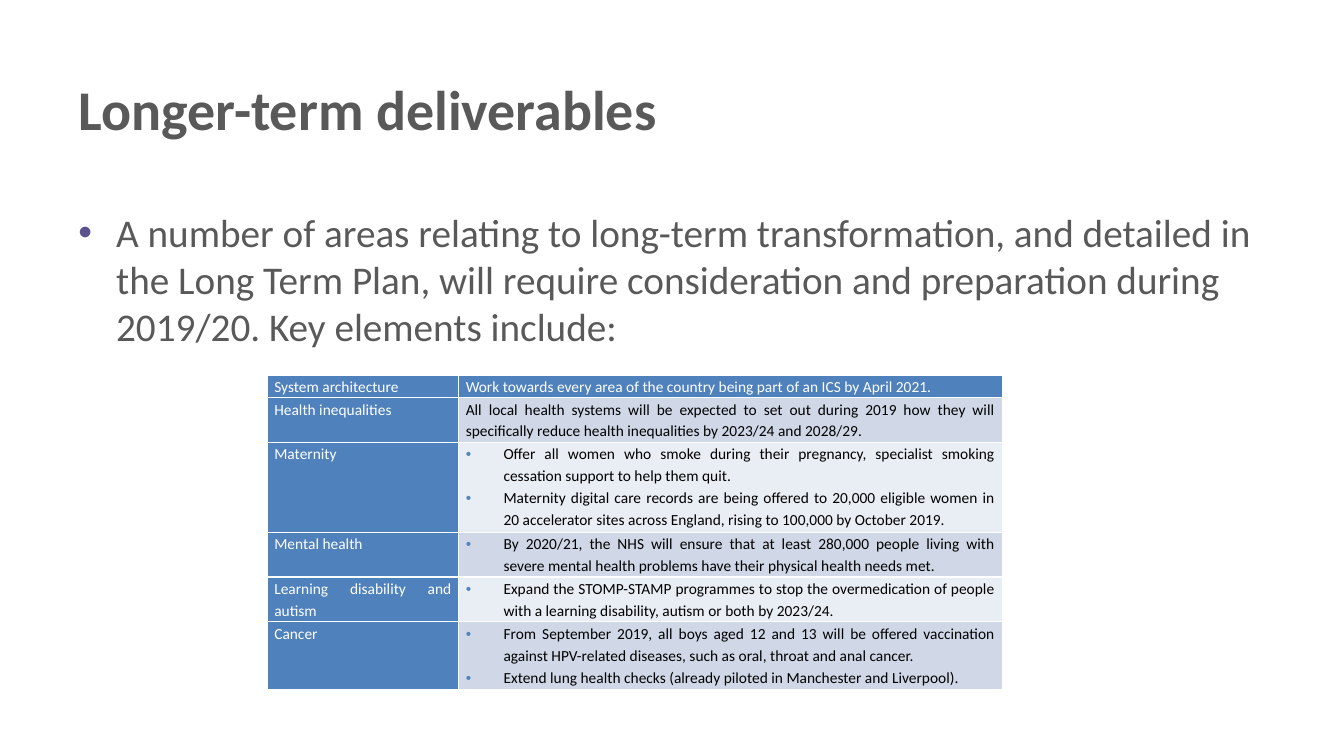
from dataclasses import dataclass

from lxml.etree import SubElement
from pptx import Presentation
from pptx.dml.color import RGBColor as RGB
from pptx.enum.text import MSO_ANCHOR as Anchor, PP_ALIGN as Align
from pptx.oxml.ns import qn
from pptx.util import Emu, Inches, Pt


@dataclass(frozen=True)
class Theme:
    font: str = "Calibri"
    text: str = "595959"
    accent: str = "4F81BD"
    bands: tuple[str, str] = ("D0D8E8", "E9EDF4")
    white: str = "FFFFFF"
    black: str = "000000"
    body_bullet: str = "5B518E"
    cell_bullet: str = "5185C0"
    title_size: int = 40
    body_size: int = 28
    cell_size: int = 11
    border: float = 1


@dataclass(frozen=True)
class Area:
    col: float
    row: float
    cols: float
    rows: float


@dataclass(frozen=True)
class Deliverable:
    topic: str
    points: tuple[str, ...]
    lines: int
    bulleted: bool = True


THEME = Theme()
WIDTH, HEIGHT = Inches(13.33), Inches(7.5)
TITLE = Area(5.1, 3.87, 80.95, 20.8)
BODY = Area(5.1, 26.93, 90.4, 59.87)
TABLE_COL, TABLE_ROW = 19.88, 49.6
TABLE_COLS = (14.25, 40.44)
LINE_ROWS = 2.97
CELL_MARGIN = 0.53
INDENT = 2.81

DELIVERABLES = [
    Deliverable("System architecture", (
        "Work towards every area of the country being part of an ICS by April 2021.",
    ), 1, False),
    Deliverable("Health inequalities", (
        "All local health systems will be expected to set out during 2019 how they will "
        "specifically reduce health inequalities by 2023/24 and 2028/29.",
    ), 2, False),
    Deliverable("Maternity", (
        "Offer all women who smoke during their pregnancy, specialist smoking cessation "
        "support to help them quit.",
        "Maternity digital care records are being offered to 20,000 eligible women in 20 "
        "accelerator sites across England, rising to 100,000 by October 2019.",
    ), 4),
    Deliverable("Mental health", (
        "By 2020/21, the NHS will ensure that at least 280,000 people living with severe "
        "mental health problems have their physical health needs met.",
    ), 2),
    Deliverable("Learning disability and autism", (
        "Expand the STOMP-STAMP programmes to stop the overmedication of people with a "
        "learning disability, autism or both by 2023/24.",
    ), 2),
    Deliverable("Cancer", (
        "From September 2019, all boys aged 12 and 13 will be offered vaccination against "
        "HPV-related diseases, such as oral, throat and anal cancer.",
        "Extend lung health checks (already piloted in Manchester and Liverpool).",
    ), 3),
]


def across(cols: float) -> Emu:
    return Emu(round(WIDTH * cols / 100))


def down(rows: float) -> Emu:
    return Emu(round(HEIGHT * rows / 100))


def add_bullet(p, color: str) -> None:
    pPr = p._p.get_or_add_pPr()
    pPr.set("marL", str(across(INDENT)))
    pPr.set("indent", str(-across(INDENT)))
    SubElement(SubElement(pPr, qn("a:buClr")), qn("a:srgbClr"), val=color)
    SubElement(pPr, qn("a:buFont"), typeface="Arial")
    SubElement(pPr, qn("a:buChar"), char="•")


def format_runs(p, size: int, color: str, bold: bool = False) -> None:
    for r in p.runs:
        r.font.name = THEME.font
        r.font.size = Pt(size)
        r.font.bold = bold
        r.font.color.rgb = RGB.from_string(color)


def add_text(s, area: Area, text: str, size: int, anchor: Anchor,
             bold: bool = False, bullet: str = "") -> None:
    sp = s.shapes.add_textbox(across(area.col), down(area.row),
                              across(area.cols), down(area.rows))
    tf = sp.text_frame
    tf.word_wrap = True
    tf.vertical_anchor = anchor
    tf.text = text
    p = tf.paragraphs[0]
    if bullet:
        add_bullet(p, bullet)
    format_runs(p, size, THEME.text, bold)


def style_cell(cell, fill: str) -> None:
    cell.margin_left = cell.margin_right = across(CELL_MARGIN)
    cell.margin_top = cell.margin_bottom = 0
    tcPr = cell._tc.get_or_add_tcPr()
    for side in "LRTB":
        ln = SubElement(tcPr, qn(f"a:ln{side}"), w=str(Pt(THEME.border)))
        SubElement(SubElement(ln, qn("a:solidFill")), qn("a:srgbClr"), val=THEME.white)
    cell.fill.solid()
    cell.fill.fore_color.rgb = RGB.from_string(fill)


def fill_cell(cell, texts: tuple[str, ...], fill: str, color: str, bulleted: bool) -> None:
    style_cell(cell, fill)
    tf = cell.text_frame
    tf.text = "\n".join(texts)
    for p in tf.paragraphs:
        if bulleted:
            add_bullet(p, THEME.cell_bullet)
        p.alignment = Align.JUSTIFY
        p.line_spacing = 1.15
        format_runs(p, THEME.cell_size, color)


def add_deliverables(s, items: list[Deliverable]) -> None:
    height = LINE_ROWS * sum(item.lines for item in items)
    frame = s.shapes.add_table(len(items), len(TABLE_COLS), across(TABLE_COL),
                               down(TABLE_ROW), across(sum(TABLE_COLS)), down(height))
    table = frame.table
    table.first_row = table.horz_banding = False
    for column, cols in zip(table.columns, TABLE_COLS):
        column.width = across(cols)
    for i, item in enumerate(items):
        table.rows[i].height = down(LINE_ROWS * item.lines)
        fill_cell(table.cell(i, 0), (item.topic,), THEME.accent, THEME.white, False)
        fill = THEME.bands[(i - 1) % 2] if i else THEME.accent
        color = THEME.black if i else THEME.white
        fill_cell(table.cell(i, 1), item.points, fill, color, item.bulleted)


def main() -> None:
    prs = Presentation()
    prs.slide_width, prs.slide_height = WIDTH, HEIGHT
    s = prs.slides.add_slide(prs.slide_layouts[6])
    add_text(s, TITLE, "Longer-term deliverables", THEME.title_size, Anchor.MIDDLE, bold=True)
    add_text(s, BODY,
             "A number of areas relating to long-term transformation, and detailed in the "
             "Long Term Plan, will require consideration and preparation during 2019/20. "
             "Key elements include:",
             THEME.body_size, Anchor.TOP, bullet=THEME.body_bullet)
    add_deliverables(s, DELIVERABLES)
    prs.save("out.pptx")


if __name__ == "__main__":
    main()
